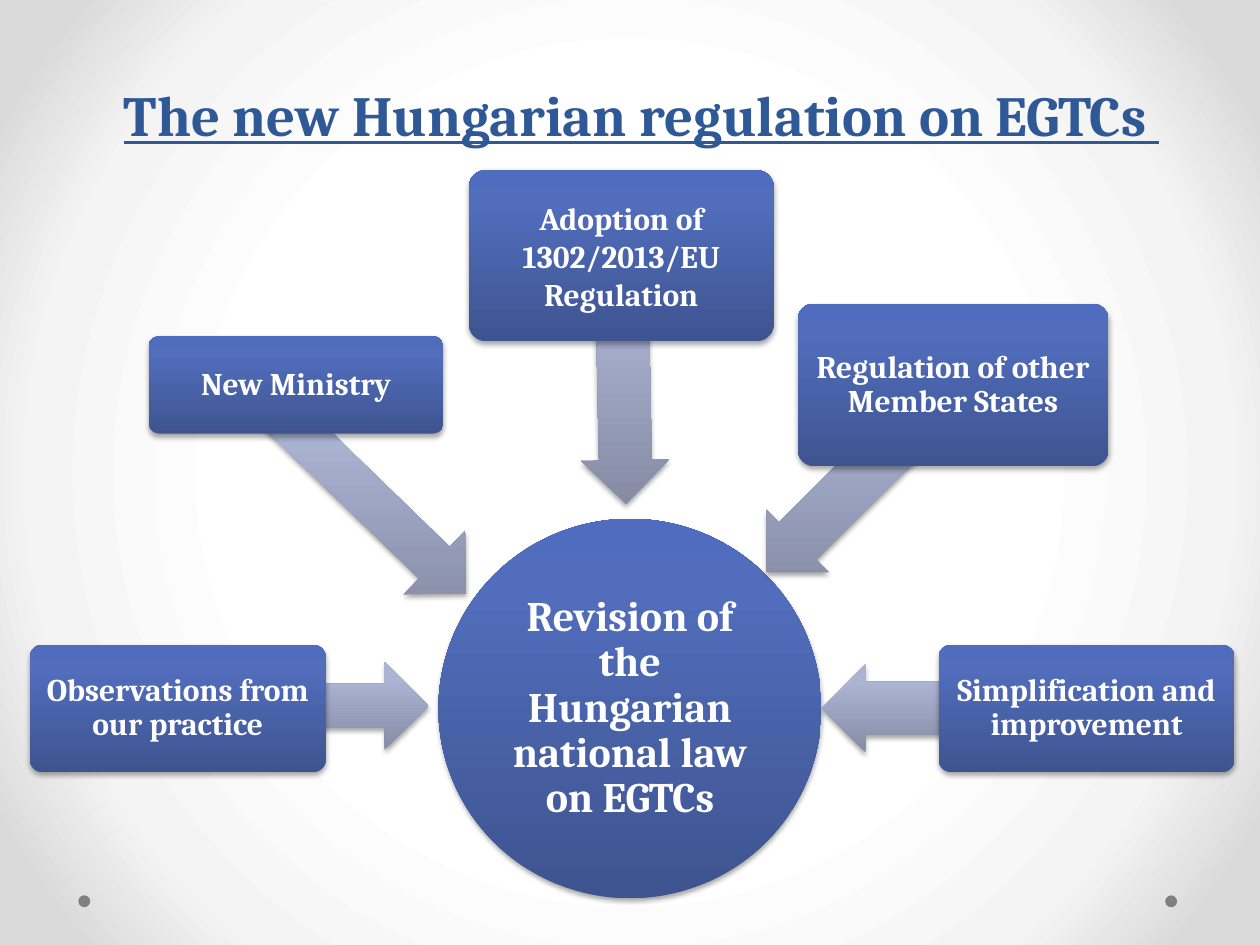
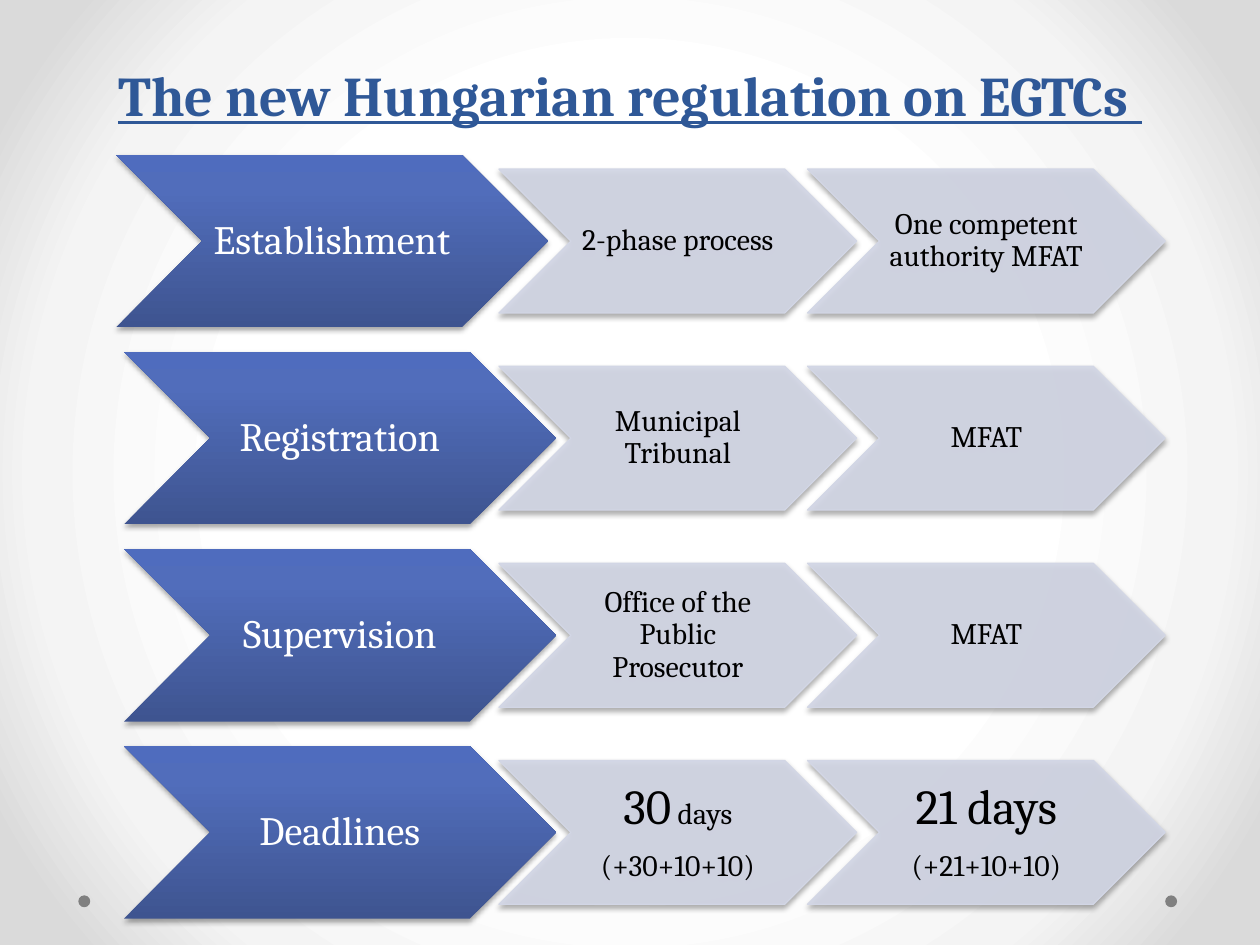
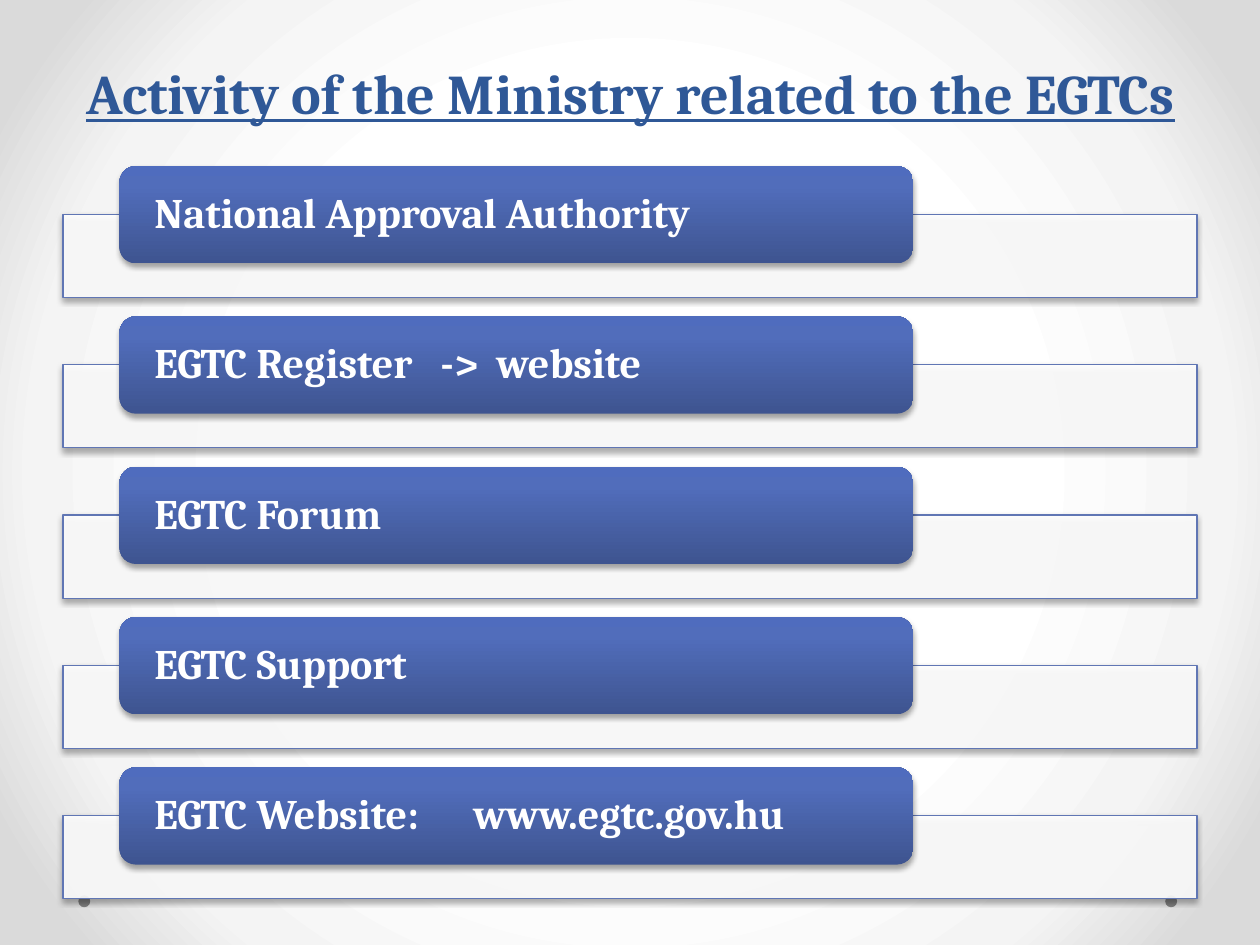
import lxml.etree
import pptx
import pptx.dml.color
import pptx.enum.shapes
import pptx.enum.text
import pptx.oxml.ns
import pptx.util

Cm, Pt = pptx.util.Cm, pptx.util.Pt
RGBColor = pptx.dml.color.RGBColor
PRESET = pptx.enum.shapes.MSO_SHAPE
ALIGN = pptx.enum.text.PP_ALIGN
ANCHOR = pptx.enum.text.MSO_ANCHOR
qn = pptx.oxml.ns.qn

FONT = "Cambria"
WHITE = RGBColor(0xFF, 0xFF, 0xFF)
BLACK = RGBColor(0, 0, 0)
TITLE_BLUE = RGBColor(0x2F, 0x58, 0x97)
PANEL_EDGE = RGBColor(0x60, 0x76, 0xB4)
PALE_BLUE = RGBColor(0xD2, 0xD6, 0xE5)
DOT_GREY = RGBColor(0x80, 0x80, 0x80)
DEEP_BLUE = [(0, RGBColor(0x3E, 0x54, 0x90)), (80, RGBColor(0x51, 0x6D, 0xBB)),
             (100, RGBColor(0x4F, 0x6C, 0xBE))]
ARROW_BLUE = [(0, RGBColor(0x85, 0x8B, 0xA3)), (80, RGBColor(0xAC, 0xB4, 0xD4)),
              (100, RGBColor(0xAC, 0xB5, 0xD6))]
BACKDROP = [(50, WHITE), (76, RGBColor(0xF4, 0xF4, 0xF4)),
            (92, RGBColor(0xDA, 0xDA, 0xDA))]


def add_xml(parent, tag, **attributes):
    return lxml.etree.SubElement(
        parent, qn(tag), {name: str(value) for name, value in attributes.items()})


def fill_gradient(fill, owner, stops, radial=False):
    """Fill with stops running upwards, or outwards from the centre."""
    fill.gradient()
    gradient = owner.find(".//" + qn("a:gradFill"))
    gradient.clear()
    gradient.set("rotWithShape", "0")
    stop_list = add_xml(gradient, "a:gsLst")
    for percent, color in stops:
        stop = add_xml(stop_list, "a:gs", pos=percent * 1000)
        add_xml(stop, "a:srgbClr", val=color)
    if radial:
        circle = add_xml(gradient, "a:path", path="circle")
        add_xml(circle, "a:fillToRect", l=50000, t=50000, r=50000, b=50000)
    else:
        add_xml(gradient, "a:lin", ang=16200000, scaled=0)


def add_shape(slide, preset, box, paint, edge=None, shadow=True):
    """paint is a list of gradient stops or one colour."""
    shape = slide.shapes.add_shape(preset, *map(Cm, box))
    properties = shape.element.spPr
    if isinstance(paint, list):
        fill_gradient(shape.fill, properties, paint)
    else:
        shape.fill.solid()
        shape.fill.fore_color.rgb = paint
    if edge is None:
        shape.line.fill.background()
    else:
        shape.line.color.rgb = edge
        shape.line.width = Pt(0.75)
    shape.shadow.inherit = False
    if shadow:
        outer = add_xml(properties.find(qn("a:effectLst")), "a:outerShdw",
                        blurRad=Pt(3.1), dist=Pt(1.8), dir=5400000, rotWithShape=0)
        add_xml(add_xml(outer, "a:srgbClr", val=BLACK), "a:alpha", val=35000)
    return shape


def make_translucent(shape):
    color = shape.element.spPr.find(qn("a:solidFill"))[0]
    add_xml(color, "a:alpha", val=90000)


def write(shape, text, size, color=WHITE, bold=False, align=ALIGN.CENTER,
          anchor=ANCHOR.MIDDLE, spacing=0.9, side=0.08, edge=0.05):
    frame = shape.text_frame
    frame.text = text
    frame.word_wrap = True
    frame.vertical_anchor = anchor
    frame.margin_left = frame.margin_right = Cm(side)
    frame.margin_top = frame.margin_bottom = Cm(edge)
    for paragraph in frame.paragraphs:
        paragraph.alignment = align
        paragraph.line_spacing = spacing
        for run in paragraph.runs:
            run.font.name = FONT
            run.font.size = Pt(size)
            run.font.bold = bold
            run.font.color.rgb = color
    return frame


def add_page(deck, title, title_box, title_size=32):
    slide = deck.slides.add_slide(deck.slide_layouts[6])
    for left in (23.49, 1.58):
        add_shape(slide, PRESET.OVAL, (left, 18.05, 0.24, 0.24), DOT_GREY, shadow=False)
    heading = slide.shapes.add_textbox(*map(Cm, title_box))
    frame = write(heading, title, title_size, TITLE_BLUE, bold=True,
                  anchor=ANCHOR.BOTTOM, spacing=Pt(58), side=0.25, edge=0.13)
    frame.paragraphs[0].runs[0].font.underline = True
    return slide


def draw_causes(slide, left, top):
    """Five causes whose arrows point at the revised law."""
    law = add_shape(slide, PRESET.OVAL, (left + 8.24, top + 7.06, 7.72, 7.65), DEEP_BLUE)
    write(law, "Revision of the Hungarian national law on EGTCs", 24, bold=True)
    causes = [
        # text, box, line spacing, arrow left, top, length, rotation, shaft
        ("Observations from our practice", (0, 9.6, 5.97, 2.57), 0.9,
         (3.06, 9.94, 4.98), 180, 0.5),
        ("New Ministry", (2.4, 3.38, 5.94, 1.96), 0.9,
         (4.3, 5.85, 5.23), 224.1, 0.5),
        ("Adoption of 1302/2013/EU Regulation", (8.85, 0.03, 6.15, 3.45), 1.0,
         (9.46, 3.36, 5.03), 268.9, 0.6),
        ("Regulation of other Member States", (15.48, 2.72, 6.27, 3.28), 0.9,
         (14.03, 5.26, 5.61), 315, 0.6),
        ("Simplification and improvement", (18.32, 9.6, 5.97, 2.57), 0.9,
         (15.96, 9.99, 5.64), 0, 0.6),
    ]
    for text, (x, y, width, height), spacing, (tail_x, tail_y, length), turn, shaft in causes:
        arrow = add_shape(slide, PRESET.LEFT_ARROW,
                          (left + tail_x, top + tail_y, length, 1.78), ARROW_BLUE)
        arrow.rotation = turn
        arrow.adjustments[0] = shaft
        cause = add_shape(slide, PRESET.ROUNDED_RECTANGLE,
                          (left + x, top + y, width, height), DEEP_BLUE)
        cause.adjustments[0] = 0.1
        write(cause, text, 18, bold=True, spacing=spacing)


def draw_stages(slide, left, top, height):
    """Rows of one large chevron and two pale ones."""
    stages = [
        ("Establishment", "2-phase process", "One competent authority MFAT"),
        ("Registration", "Municipal Tribunal", "MFAT"),
        ("Supervision", "Office of the Public Prosecutor", "MFAT"),
        ("Deadlines", "30 days\n(+30+10+10)", "21 days\n(+21+10+10)"),
    ]
    stage_height, detail_height = 3.48, 2.9
    pitch = (height - stage_height) / (len(stages) - 1)
    for row, (name, *details) in enumerate(stages):
        y = top + row * pitch
        x = left - 0.16 if row == 0 else left
        stage = add_shape(slide, PRESET.CHEVRON, (x, y, 8.71, stage_height), DEEP_BLUE)
        write(stage, name, 23, side=0.03)
        for column, text in enumerate(details):
            detail = add_shape(
                slide, PRESET.CHEVRON,
                (left + 7.56 + column * 6.22, y + (stage_height - detail_height) / 2,
                 7.21, detail_height), PALE_BLUE, edge=PALE_BLUE)
            make_translucent(detail)
            frame = write(detail, text, 17, BLACK, side=0.03)
            if name == "Deadlines":
                emphasize_days(frame.paragraphs[0], whole=column == 1)


def emphasize_days(days, whole):
    """Enlarge the number of days, or the whole line."""
    days.space_after = Pt(9)
    number = days.runs[0]
    if not whole:
        unit = days.add_run()
        number.text, unit.text = "30", " days"
        unit.font.name = FONT
        unit.font.size = number.font.size
        unit.font.color.rgb = BLACK
    number.font.size = Pt(28)


def draw_activities(slide, left, top, width, height):
    """Labels overlapping wide panels; tab stops are in cm."""
    activities = [
        ("National Approval Authority", ()),
        ("EGTC Register\t->\twebsite", (5.77, 6.89)),
        ("EGTC Forum", ()),
        ("EGTC Support", ()),
        ("EGTC Website:\twww.egtc.gov.hu", (6.43,)),
    ]
    panel_drop, panel_height = 0.97, 1.68
    pitch = (height - panel_drop - panel_height) / (len(activities) - 1)
    for row, (text, stops) in enumerate(activities):
        y = top + row * pitch
        panel = add_shape(slide, PRESET.RECTANGLE,
                          (left, y + panel_drop, width, panel_height), WHITE, PANEL_EDGE)
        make_translucent(panel)
        label = add_shape(slide, PRESET.ROUNDED_RECTANGLE,
                          (left + 1.14, y, 16, 1.96), DEEP_BLUE)
        frame = write(label, text, 24, bold=True, align=ALIGN.LEFT, side=0.61, edge=0)
        if stops:
            paragraph = frame.paragraphs[0].runs[0].font
            properties = label.element.find(".//" + qn("a:pPr"))
            tabs = add_xml(properties, "a:tabLst")
            for stop in stops:
                add_xml(tabs, "a:tab", pos=Cm(stop), algn="l")


def main():
    deck = pptx.Presentation()
    deck.slide_width, deck.slide_height = Cm(25.4), Cm(19.05)
    master = deck.slide_master
    fill_gradient(master.background.fill, master.element, BACKDROP, radial=True)

    regulation = "The new Hungarian regulation on EGTCs "
    causes = add_page(deck, regulation, (1.5, 1.32, 22.86, 1.8), 32.4)
    draw_causes(causes, 0.6, 3.4)
    stages = add_page(deck, regulation, (1.27, 0.91, 22.86, 1.8))
    draw_stages(stages, 2.5, 3.12, 15.4)
    activities = add_page(deck, "Activity of the Ministry related to the EGTCs",
                          (0.51, 0.74, 24.41, 1.93))
    draw_activities(activities, 1.27, 3.35, 22.86, 14.77)
    deck.save("out.pptx")


if __name__ == "__main__":
    main()
